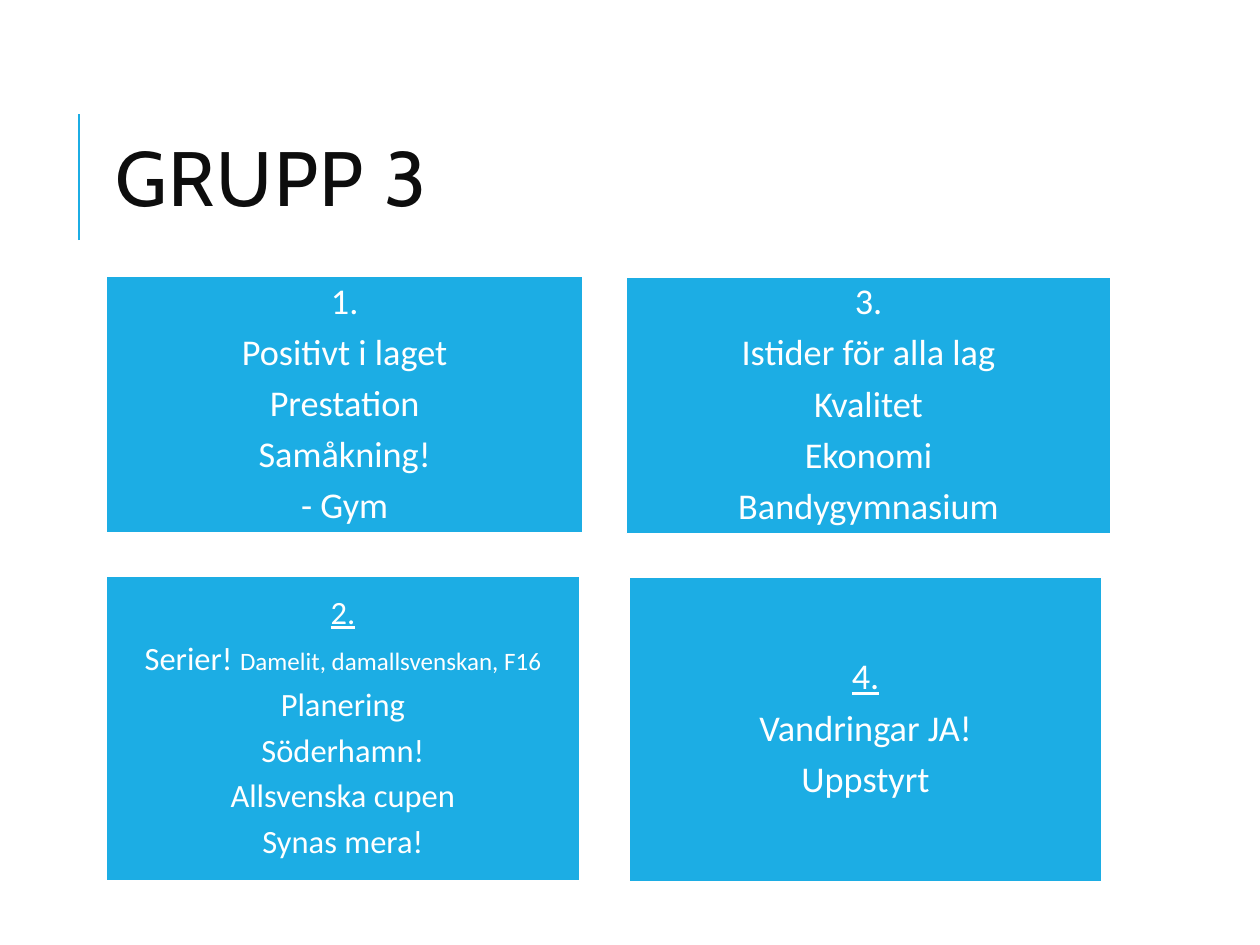
"""Build the GRUPP 3 slide with four boxes of group notes."""
from lxml.etree import SubElement
from pptx import Presentation
from pptx.dml.color import RGBColor as RGB
from pptx.enum.shapes import MSO_CONNECTOR as CONN, MSO_SHAPE as SHAPE
from pptx.enum.text import MSO_ANCHOR as ANCHOR, MSO_AUTO_SIZE as AUTO, PP_ALIGN as ALIGN
from pptx.oxml.ns import qn
from pptx.util import Cm, Pt

COLORS = {"accent": "1CADE4", "title": "0D0D0D", "white": "FFFFFF"}
SPACING = 0.33

BOXES = [
    ((3, 7.8, 13.46, 7.24), 29, False,
     [["1."], ["Positivt i laget"], ["Prestation"], ["Samåkning!"], ["- Gym"]]),
    ((17.68, 7.82, 13.67, 7.24), 29, False,
     [["3."], ["Istider för alla lag"], ["Kvalitet"], ["Ekonomi"], ["Bandygymnasium"]]),
    ((3, 16.26, 13.36, 8.61), 26, True,
     [["2."], ["Serier! ", "Damelit, damallsvenskan, F16"], ["Planering"],
      ["Söderhamn!"], ["Allsvenska cupen"], ["Synas mera!"]]),
    ((17.75, 16.28, 13.36, 8.61), 29, True,
     [["4."], ["Vandringar JA!"], ["Uppstyrt"]]),
]


def color(name):
    return RGB.from_string(COLORS[name])


def format_run(r, font, size, name):
    r.font.name = font
    r.font.size = Pt(size)
    r.font.color.rgb = color(name)


def add_title(s, text):
    sp = s.shapes.title
    sp.left, sp.top, sp.width, sp.height = Cm(3), Cm(2.29), Cm(28.35), Cm(5.84)
    tf = sp.text_frame
    tf.text = text
    tf.word_wrap = True
    tf.auto_size = AUTO.NONE
    tf.vertical_anchor = ANCHOR.MIDDLE
    p = tf.paragraphs[0]
    p.alignment = ALIGN.LEFT
    p.line_spacing = 0.8
    r = p.runs[0]
    format_run(r, "Cabin", 61.6, "title")
    r._r.get_or_add_rPr().set("spc", "140")


def add_rule(s):
    line = s.shapes.add_connector(CONN.STRAIGHT, Cm(2.24), Cm(6.78), Cm(2.24), Cm(3.23))
    line.line.color.rgb = color("accent")
    line.line.width = Pt(1.5)
    SubElement(line._element.spPr, qn("a:effectLst"))


def add_box(s, bounds, size, underlined, lines):
    sp = s.shapes.add_shape(SHAPE.RECTANGLE, *map(Cm, bounds))
    sp.shadow.inherit = False
    sp.fill.solid()
    sp.fill.fore_color.rgb = color("accent")
    sp.line.color.rgb = color("white")
    sp.line.width = Pt(1.25)
    tf = sp.text_frame
    tf.word_wrap = True
    tf.vertical_anchor = ANCHOR.MIDDLE
    tf.margin_left = tf.margin_right = tf.margin_top = tf.margin_bottom = Cm(0.3)
    for i, (text, *details) in enumerate(lines):
        p = tf.add_paragraph() if i else tf.paragraphs[0]
        p.text = text
        p.alignment = ALIGN.CENTER
        p.line_spacing = 0.9
        p.space_after = Pt(round(size * SPACING, 1))
        format_run(p.runs[0], "Calibri", size, "white")
        for detail in details:
            r = p.add_run()
            r.text = detail
            format_run(r, "Calibri", 20, "white")
    if underlined:
        tf.paragraphs[0].runs[0].font.underline = True


def main():
    prs = Presentation()
    prs.slide_width, prs.slide_height = Cm(35.56), Cm(26.67)
    s = prs.slides.add_slide(prs.slide_layouts[5])
    add_rule(s)
    add_title(s, "GRUPP 3")
    for box in BOXES:
        add_box(s, *box)
    prs.save("out.pptx")


if __name__ == "__main__":
    main()
